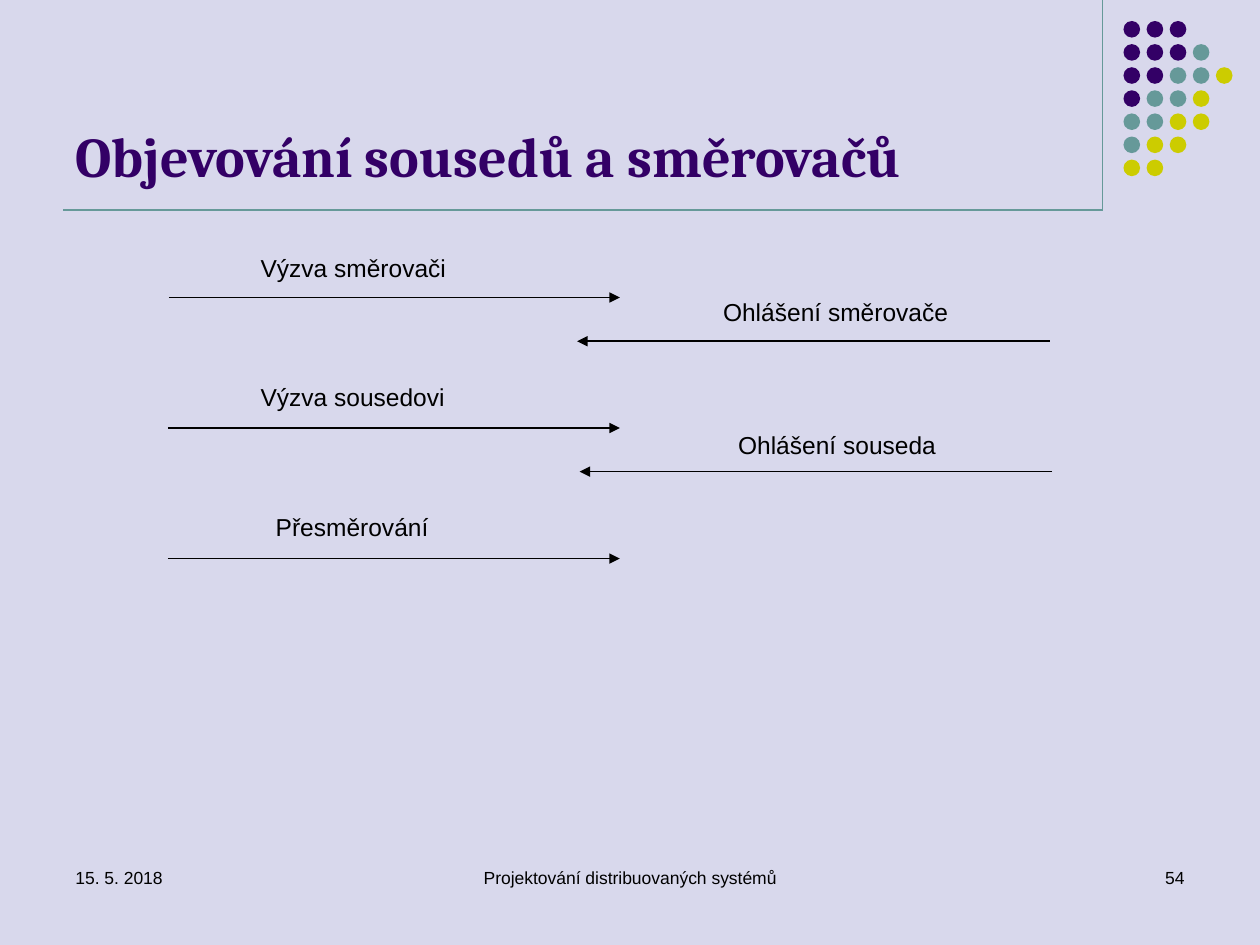
from lxml import etree
from pptx import Presentation
from pptx import util as u
from pptx.dml.color import RGBColor
from pptx.enum import shapes, text
from pptx.oxml.ns import qn

Pt = u.Pt
A, AN = text.PP_ALIGN, text.MSO_ANCHOR
COLORS = {"bg": "D8D8EC", "purple": "330066", "teal": "669999",
          "lime": "CCCC00", "black": "000000"}

TITLE = "Objevování sousedů a směrovačů"
# text, left, width, alignment
FOOTERS = [("15. 5. 2018", 36, 168, A.LEFT),
           ("Projektování distribuovaných systémů", 246, 228, A.CENTER),
           ("54", 516, 168, A.RIGHT)]
# label, label left, top and width, arrow start x, end x, y
MESSAGES = [("Výzva směrovači", 141.8, 139.7, 121.7, 96.5, 354.2, 170),
            ("Ohlášení směrovače", 406.1, 164.9, 144, 600, 329.8, 195),
            ("Výzva sousedovi", 141.8, 213.8, 121, 96, 354.2, 244.6),
            ("Ohlášení souseda", 414.7, 241.2, 127.4, 601.2, 331.2, 269.5),
            ("Přesměrování", 150.5, 288, 105.1, 96, 354.2, 319.2)]
RULES = [(630, 0, 630, 120), (36, 120, 630, 120)]
DOT_ROWS = ["PPP", "PPPT", "PPTTL", "PTTL", "TTLL", "TLL", "LL"]
DOT_COLORS = {"P": "purple", "T": "teal", "L": "lime"}
DOT_LEFT, DOT_TOP, DOT_STEP, DOT_SIZE = 642, 12, 13.2, 9.5


def rgb(name):
    return RGBColor.from_string(COLORS[name])


def write(sp, words, size, font="Arial", color="black", bold=False,
          align=A.LEFT, anchor=AN.TOP, wrap=True, spacing=None, after=0):
    tf = sp.text_frame
    tf.auto_size = text.MSO_AUTO_SIZE.NONE
    tf.word_wrap, tf.vertical_anchor = wrap, anchor
    p = tf.paragraphs[0]
    p.alignment, p.line_spacing, p.space_after = align, spacing, Pt(after)
    r = p.add_run()
    r.text = words
    r.font.name, r.font.size, r.font.bold = font, Pt(size), bold
    r.font.color.rgb = rgb(color)


def line(s, ends, color, width, arrow=False):
    c = s.shapes.add_connector(shapes.MSO_CONNECTOR.STRAIGHT, *map(Pt, ends))
    c.line.color.rgb, c.line.width = rgb(color), Pt(width)
    if arrow:
        ln = c.line._get_or_add_ln()
        etree.SubElement(ln, qn("a:tailEnd"), type="triangle")
    etree.SubElement(c._element.spPr, qn("a:effectLst"))


def dots(s):
    for row, codes in enumerate(DOT_ROWS):
        for col, code in enumerate(codes):
            sp = s.shapes.add_shape(
                shapes.MSO_SHAPE.OVAL, Pt(DOT_LEFT + col * DOT_STEP),
                Pt(DOT_TOP + row * DOT_STEP), Pt(DOT_SIZE), Pt(DOT_SIZE))
            sp.shadow.inherit = False
            sp.fill.solid()
            sp.fill.fore_color.rgb = rgb(DOT_COLORS[code])
            sp.line.fill.background()


def main():
    prs = Presentation()
    prs.slide_width, prs.slide_height = Pt(720), Pt(540)
    s = prs.slides.add_slide(prs.slide_layouts[5])
    s.background.fill.solid()
    s.background.fill.fore_color.rgb = rgb("bg")

    for ends in RULES:
        line(s, ends, "teal", 0.75)
    dots(s)

    title = s.shapes.title
    title.left, title.top, title.width, title.height = map(Pt, (36, 9.4, 594, 102))
    write(title, TITLE, 32, font="Cambria", color="purple", bold=True,
          anchor=AN.BOTTOM)

    for words, left, width, align in FOOTERS:
        sp = s.shapes.add_textbox(Pt(left), Pt(492), Pt(width), Pt(36))
        write(sp, words, 10, align=align)

    for words, left, top, width, start, end, y in MESSAGES:
        line(s, (start, y, end, y), "black", 1, arrow=True)
        sp = s.shapes.add_textbox(Pt(left), Pt(top), Pt(width), Pt(37.4))
        write(sp, words, 14, wrap=False, spacing=1.07, after=8)

    prs.save("out.pptx")


if __name__ == "__main__":
    main()
